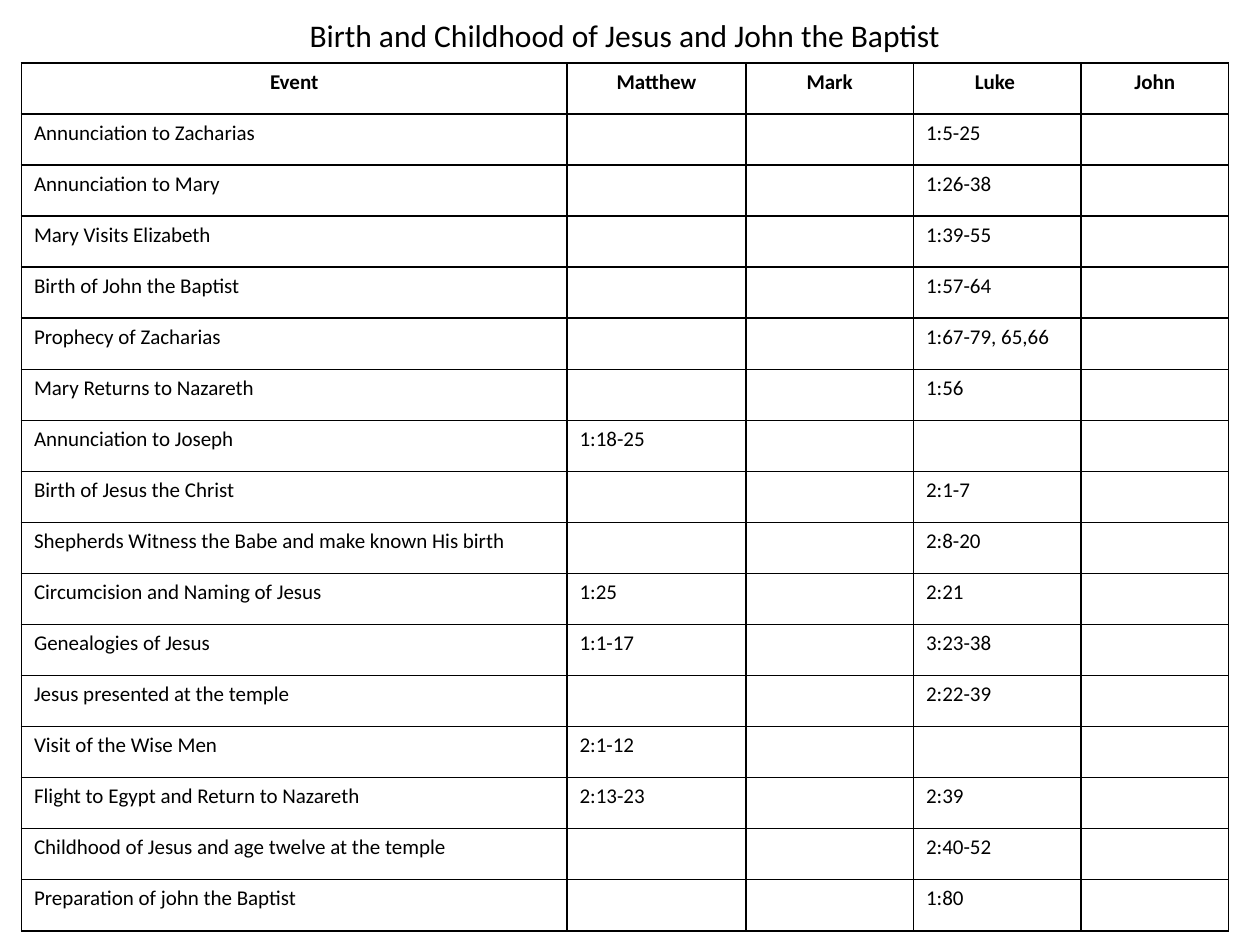
"""Build a slide with a table of Gospel passages on the birth and childhood of Jesus and John."""
from lxml import etree
from pptx import Presentation
from pptx.dml.color import RGBColor
from pptx.enum.text import MSO_ANCHOR, MSO_AUTO_SIZE, PP_ALIGN
from pptx.oxml.ns import qn
from pptx.util import Inches, Pt

CENTER, LEFT = PP_ALIGN.CENTER, PP_ALIGN.LEFT
TOP = MSO_ANCHOR.TOP
FIT_SHAPE = MSO_AUTO_SIZE.SHAPE_TO_FIT_TEXT
TITLE_ONLY = 5

THEME = {
    "font": "Calibri",
    "ink": "000000",
    "title_size": Pt(18),
    "cell_size": Pt(12),
    "border": Pt(1),
}

TITLE = "Birth and Childhood of Jesus and John the Baptist"
HEADERS = ["Event", "Matthew", "Mark", "Luke ", "John"]
COLUMN_WIDTHS = [4.33, 1.42, 1.33, 1.33, 1.17]
EVENTS = [
    ("Annunciation to Zacharias", {"Luke": "1:5-25"}),
    ("Annunciation to Mary", {"Luke": "1:26-38"}),
    ("Mary Visits Elizabeth", {"Luke": "1:39-55"}),
    ("Birth of John the Baptist", {"Luke": "1:57-64"}),
    ("Prophecy of Zacharias", {"Luke": "1:67-79, 65,66"}),
    ("Mary Returns to Nazareth", {"Luke": "1:56"}),
    ("Annunciation to Joseph", {"Matthew": "1:18-25"}),
    ("Birth of Jesus the Christ", {"Luke": "2:1-7"}),
    ("Shepherds Witness the Babe and make known His birth", {"Luke": "2:8-20"}),
    ("Circumcision and Naming of Jesus", {"Matthew": "1:25", "Luke": "2:21"}),
    ("Genealogies of Jesus", {"Matthew": "1:1-17", "Luke": "3:23-38"}),
    ("Jesus presented at the temple", {"Luke": "2:22-39"}),
    ("Visit of the Wise Men", {"Matthew": "2:1-12"}),
    ("Flight to Egypt and Return to Nazareth", {"Matthew": "2:13-23", "Luke": "2:39"}),
    ("Childhood of Jesus and age twelve at the temple", {"Luke": "2:40-52"}),
    ("Preparation of john the Baptist", {"Luke": "1:80"}),
]

MARGIN_LEFT = 0.17
CONTENT_WIDTH = sum(COLUMN_WIDTHS)
TITLE_TOP, TITLE_HEIGHT = 0.08, 0.4
TABLE_TOP, TABLE_HEIGHT = 0.5, 6.89


def write_text(paragraph, text, size, bold=False, alignment=LEFT):
    paragraph.alignment = alignment
    run = paragraph.add_run()
    run.text = text
    run.font.name = THEME["font"]
    run.font.size = size
    run.font.bold = bold
    run.font.color.rgb = RGBColor.from_string(THEME["ink"])


def add_borders(cell):
    properties = cell._tc.get_or_add_tcPr()
    for index, side in enumerate(("lnL", "lnR", "lnT", "lnB")):
        line = etree.Element(qn(f"a:{side}"), w=str(THEME["border"]))
        fill = etree.SubElement(line, qn("a:solidFill"))
        etree.SubElement(fill, qn("a:srgbClr"), val=THEME["ink"])
        properties.insert(index, line)


def add_title(slide):
    title = slide.shapes.title
    title.left, title.top = Inches(MARGIN_LEFT), Inches(TITLE_TOP)
    title.width, title.height = Inches(CONTENT_WIDTH), Inches(TITLE_HEIGHT)
    frame = title.text_frame
    frame.word_wrap = True
    frame.auto_size = FIT_SHAPE
    frame.vertical_anchor = TOP
    write_text(frame.paragraphs[0], TITLE, THEME["title_size"], alignment=CENTER)


def add_passage_table(slide):
    gospels = [header.strip() for header in HEADERS[1:]]
    rows = [HEADERS] + [
        [event] + [passages.get(gospel, "") for gospel in gospels]
        for event, passages in EVENTS
    ]
    table = slide.shapes.add_table(
        len(rows), len(HEADERS), Inches(MARGIN_LEFT), Inches(TABLE_TOP),
        Inches(CONTENT_WIDTH), Inches(TABLE_HEIGHT),
    ).table
    table.horz_banding = False
    for column, width in zip(table.columns, COLUMN_WIDTHS):
        column.width = Inches(width)
    for row_index, (row, texts) in enumerate(zip(table.rows, rows)):
        row.height = Inches(TABLE_HEIGHT / len(rows))
        is_header = row_index == 0
        for cell, text in zip(row.cells, texts):
            cell.fill.background()
            add_borders(cell)
            if text:
                write_text(cell.text_frame.paragraphs[0], text, THEME["cell_size"],
                           is_header, CENTER if is_header else LEFT)


def main():
    presentation = Presentation()
    presentation.slide_width, presentation.slide_height = Inches(10), Inches(7.5)
    slide = presentation.slides.add_slide(presentation.slide_layouts[TITLE_ONLY])
    add_passage_table(slide)
    add_title(slide)
    presentation.save("out.pptx")


if __name__ == "__main__":
    main()
